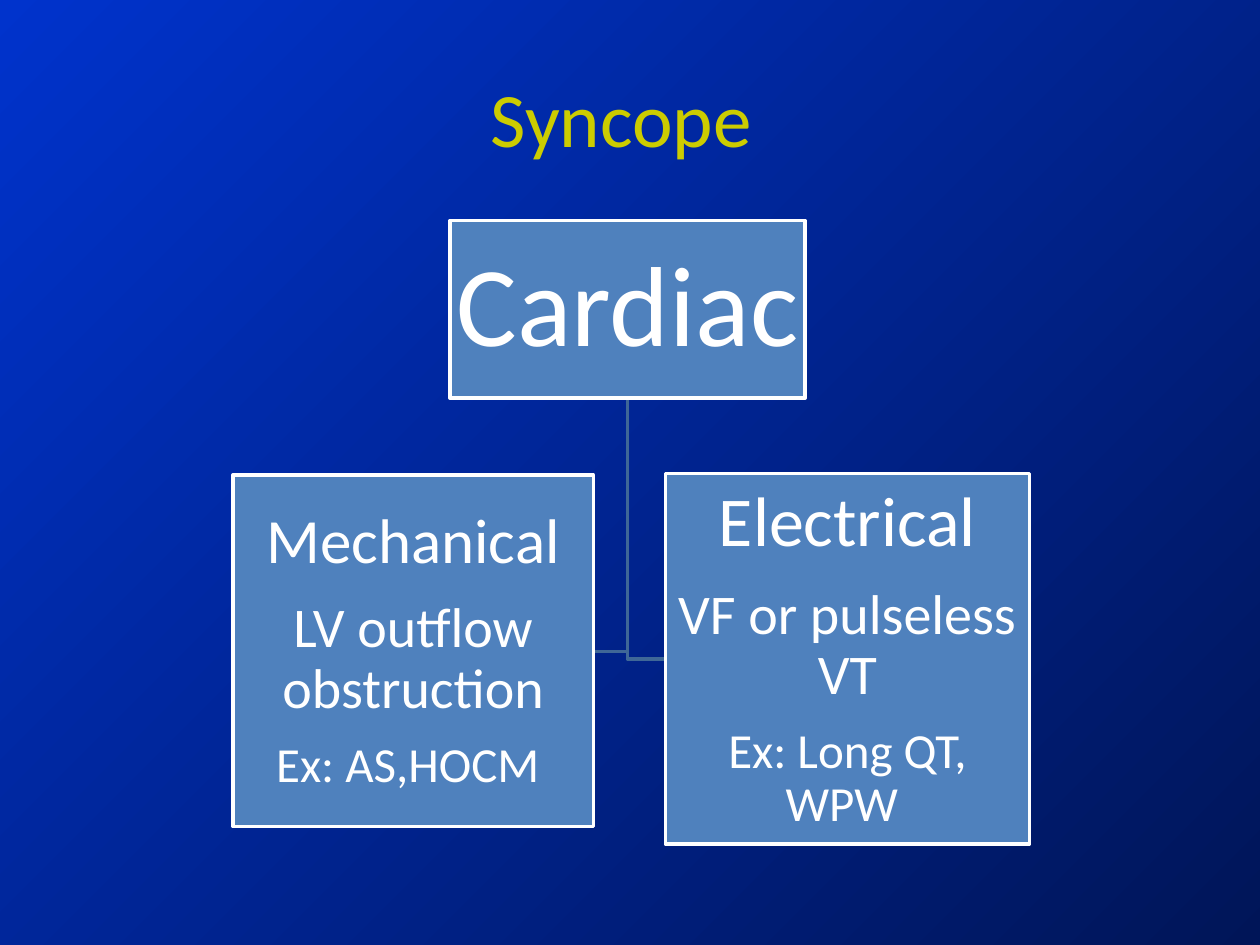
"""Build the Syncope slide: cardiac causes split into mechanical and electrical."""
from pptx import Presentation
from pptx.dml.color import RGBColor
from pptx.enum.shapes import MSO_SHAPE
from pptx.enum.text import MSO_ANCHOR, PP_ALIGN
from pptx.util import Inches, Pt

BLUE = RGBColor(0x00, 0x33, 0xCC)
NAVY = RGBColor(0x00, 0x15, 0x58)
YELLOW = RGBColor(0xCC, 0xCC, 0x00)
STEEL = RGBColor(0x4F, 0x81, 0xBD)
SLATE = RGBColor(0x3F, 0x67, 0x97)
WHITE = RGBColor(0xFF, 0xFF, 0xFF)
FONT = "Calibri"

TRUNK_X, TRUNK_TOP = 4.98, 3.16
BRANCHES = [(5.28, 5.23), (4.7, 5.17)]
BOXES = [
    ((3.57, 1.75, 2.82, 1.41), 0.05, [("Cardiac ", 65)]),
    ((1.85, 3.77, 2.86, 2.79), 0.03,
     [("Mechanical", 36), ("LV outflow obstruction", 32), ("Ex: AS,HOCM ", 28)]),
    ((5.28, 3.76, 2.89, 2.94), 0.03,
     [("Electrical", 40), ("VF or pulseless VT", 32), ("Ex: Long QT, WPW ", 28)]),
]


def write_line(paragraph, text, size, color):
    paragraph.text = text
    paragraph.alignment = PP_ALIGN.CENTER
    font = paragraph.runs[0].font
    font.name, font.size, font.color.rgb = FONT, Pt(size), color


deck = Presentation()
deck.slide_width, deck.slide_height = Inches(10), Inches(7.5)
page = deck.slides.add_slide(deck.slide_layouts[5])

backdrop = page.background.fill
backdrop.gradient()
backdrop.gradient_angle = 315
for stop, color in zip(backdrop.gradient_stops, (BLUE, NAVY)):
    stop.color.rgb = color

title = page.shapes.title
title.left, title.top, title.width, title.height = map(Inches, (0.5, 0.3, 9, 1.25))
title.text_frame.vertical_anchor = MSO_ANCHOR.MIDDLE
write_line(title.text_frame.paragraphs[0], "Syncope ", 44, YELLOW)

for end_x, end_y in BRANCHES:
    builder = page.shapes.build_freeform(Inches(TRUNK_X), Inches(TRUNK_TOP))
    corners = [(TRUNK_X, end_y), (end_x, end_y)]
    builder.add_line_segments([(Inches(x), Inches(y)) for x, y in corners], close=False)
    branch = builder.convert_to_shape()
    branch.shadow.inherit = False
    branch.fill.background()
    branch.line.color.rgb = SLATE
    branch.line.width = Pt(2)

for place, inset, lines in BOXES:
    box = page.shapes.add_shape(MSO_SHAPE.RECTANGLE, *map(Inches, place))
    box.shadow.inherit = False
    box.fill.solid()
    box.fill.fore_color.rgb = STEEL
    box.line.color.rgb = WHITE
    box.line.width = Pt(2)
    frame = box.text_frame
    frame.word_wrap = True
    frame.vertical_anchor = MSO_ANCHOR.MIDDLE
    frame.margin_left = frame.margin_right = Inches(inset)
    frame.margin_top = frame.margin_bottom = Inches(inset)
    frame.text = "\n".join(text for text, size in lines)
    for paragraph, (text, size) in zip(frame.paragraphs, lines):
        write_line(paragraph, text, size, WHITE)
        paragraph.line_spacing = 0.9
        paragraph.space_after = Pt(0.35 * size)

deck.save("out.pptx")
